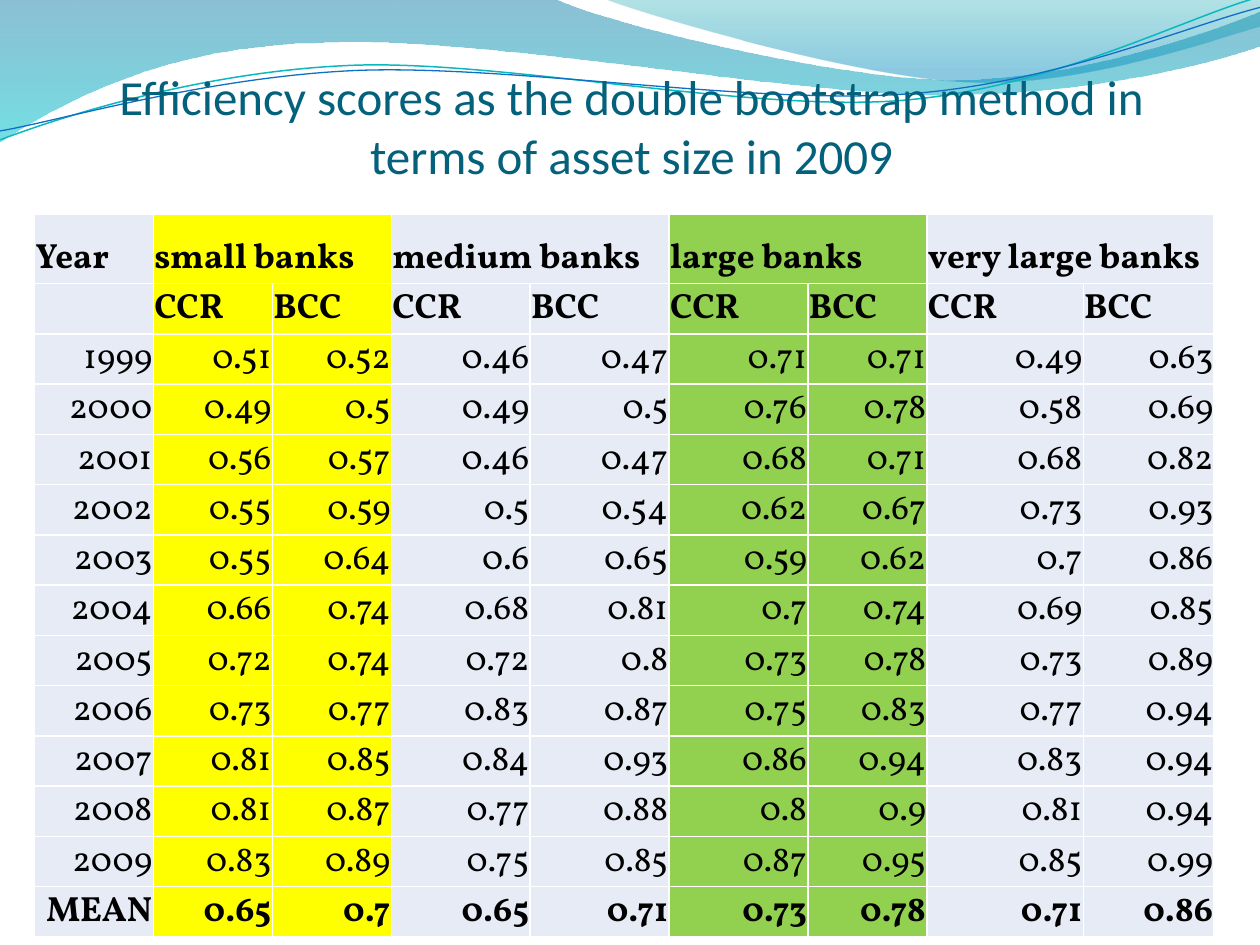
"""Build the slide of bank efficiency scores by asset size."""
from math import cos, radians, sin
from lxml.etree import SubElement
from pptx import Presentation
from pptx.dml.color import RGBColor as RGB
from pptx.enum.text import MSO_ANCHOR as ANCHOR, PP_ALIGN as ALIGN
from pptx.oxml.ns import qn
from pptx.util import Cm, Pt

TITLE = "Efficiency scores as the double bootstrap method in terms of asset size in 2009"
GROUPS = [("small banks", "small"), ("medium banks", "plain"),
          ("large banks", "large"), ("very large banks", "plain")]
MEASURES = ["CCR", "BCC"]
SCORES = [
    ("1999", 0.51, 0.52, 0.46, 0.47, 0.71, 0.71, 0.49, 0.63),
    ("2000", 0.49, 0.5, 0.49, 0.5, 0.76, 0.78, 0.58, 0.69),
    ("2001", 0.56, 0.57, 0.46, 0.47, 0.68, 0.71, 0.68, 0.82),
    ("2002", 0.55, 0.59, 0.5, 0.54, 0.62, 0.67, 0.73, 0.93),
    ("2003", 0.55, 0.64, 0.6, 0.65, 0.59, 0.62, 0.7, 0.86),
    ("2004", 0.66, 0.74, 0.68, 0.81, 0.7, 0.74, 0.69, 0.85),
    ("2005", 0.72, 0.74, 0.72, 0.8, 0.73, 0.78, 0.73, 0.89),
    ("2006", 0.73, 0.77, 0.83, 0.87, 0.75, 0.83, 0.77, 0.94),
    ("2007", 0.81, 0.85, 0.84, 0.93, 0.86, 0.94, 0.83, 0.94),
    ("2008", 0.81, 0.87, 0.77, 0.88, 0.8, 0.9, 0.81, 0.94),
    ("2009", 0.83, 0.89, 0.75, 0.85, 0.87, 0.95, 0.85, 0.99),
    ("MEAN", 0.65, 0.7, 0.65, 0.71, 0.73, 0.78, 0.71, 0.86),
]
COL_WIDTHS = [2.39, 2.4, 2.4, 2.8, 2.8, 2.8, 2.4, 3.15, 2.64]
HEAD_HEIGHT, BODY_HEIGHT = 1.4, 13.17

THEME = {
    "title": ("Calibri", 28, "04617B"), "body": ("Vollkorn", 20, "000000"),
    "plain": "E7EBF5", "small": "FFFF00", "large": "92D050", "border": "FFFFFF",
    "deep_wave": [(0, "0074A1", 45), (1, "00C6CF", 55)],
    "light_wave": [(0, "00A1A9", 30), (0.8, "008BBF", 45)],
    "teal_line": ("0AB8BF", 0.85), "blue_line": ("0F6FC6", 0.75),
}

# Each segment holds one point for a straight edge or three for a Bezier curve.
WAVES = [
    ("deep_wave", (0, -0.03), [
        [(11.18, -0.03)],
        [(12.09, 0.43), (16.87, 1.6), (19.25, 1.6)],
        [(21.67, 1.6), (24.33, 0.66), (25.4, 0.23)],
        [(25.43, 0.91)],
        [(24.97, 1.12), (22.1, 1.93), (18.95, 1.91)],
        [(15.8, 1.91), (9.7, 0.71), (6.53, 0.86)],
        [(3.28, 0.89), (1.17, 2.11), (-0.03, 2.87)]]),
    ("light_wave", (12.17, -0.03), [
        [(12.93, 0.28), (17.32, 1.57), (19.53, 1.65)],
        [(21.74, 1.75), (24.41, 0.81), (25.4, 0.53)],
        [(25.4, 0)]]),
]
LINES = [
    ("teal_line", (0, 2.82), [
        [(1.22, 2.36), (4.01, 1.45), (7.04, 1.32)],
        [(10.03, 1.19), (15.06, 2.26), (18.11, 2.03)],
        [(21.16, 1.8), (23.83, 0.38), (25.35, -0.05)]]),
    ("blue_line", (0, 2.64), [
        [(1.19, 2.44), (4.17, 1.55), (7.19, 1.42)],
        [(10.24, 1.3), (15.16, 2.11), (18.21, 1.9)],
        [(21.23, 1.7), (23.9, 0.53), (25.4, 0.15)]]),
]
LINE_TILT, LINE_CENTER = 2.7, (12.68, 1.48)


def level(point):
    a, (cx, cy) = radians(LINE_TILT), LINE_CENTER
    dx, dy = point[0] - cx, point[1] - cy
    return cx + dx * cos(a) - dy * sin(a), cy + dx * sin(a) + dy * cos(a)


def add_outline(slide, start, segments, close):
    points = [(Cm(x), Cm(y)) for seg in segments for x, y in seg]
    builder = slide.shapes.build_freeform(Cm(start[0]), Cm(start[1]))
    builder.add_line_segments(points, close=close)
    s = builder.convert_to_shape()
    s.shadow.inherit = False
    edges = iter(list(s._element.iter(qn("a:lnTo"))))
    for seg in segments:
        group = [next(edges) for _ in seg]
        if len(group) == 3:
            group[0].tag = qn("a:cubicBezTo")
            for edge in group[1:]:
                group[0].append(edge[0])
                edge.getparent().remove(edge)
    return s


def add_wave(slide, name, start, segments):
    s = add_outline(slide, start, segments, True)
    s.line.fill.background()
    s.fill.gradient()
    s.fill.gradient_angle = 270
    for stop, (pos, color, _) in zip(s.fill.gradient_stops, THEME[name]):
        stop.position = pos
        stop.color.rgb = RGB.from_string(color)
    for clr, (_, _, alpha) in zip(s._element.spPr.iter(qn("a:srgbClr")), THEME[name]):
        SubElement(clr, qn("a:alpha"), val=str(alpha * 1000))


def add_line(slide, name, start, segments):
    color, width = THEME[name]
    flat = [[level(point) for point in seg] for seg in segments]
    s = add_outline(slide, level(start), flat, False)
    s.rotation = 360 - LINE_TILT
    s.fill.background()
    s.line.color.rgb = RGB.from_string(color)
    s.line.width = Pt(width)


def write(tf, text, style, align, bold=False):
    p = tf.paragraphs[0]
    p.alignment = align
    r = p.add_run()
    r.text = text
    name, size, color = THEME[style]
    r.font.name, r.font.size, r.font.bold = name, Pt(size), bold
    r.font.color.rgb = RGB.from_string(color)


def add_title(slide):
    s = slide.shapes.add_textbox(Cm(1.3), Cm(1.12), Cm(22.86), Cm(2.6))
    tf = s.text_frame
    tf.word_wrap = True
    tf.vertical_anchor = ANCHOR.BOTTOM
    tf.margin_left = tf.margin_right = tf.margin_bottom = 0
    tf.margin_top = Cm(0.13)
    write(tf, TITLE, "title", ALIGN.CENTER)


def style_cell(cell, fill):
    cell.margin_left = cell.margin_right = cell.margin_top = Cm(0.02)
    cell.margin_bottom = 0
    tc_pr = cell._tc.get_or_add_tcPr()
    for side in ("lnL", "lnR", "lnT", "lnB"):
        ln = SubElement(tc_pr, qn(f"a:{side}"), w=str(Pt(1)))
        SubElement(SubElement(ln, qn("a:solidFill")), qn("a:srgbClr"), val=THEME["border"])
    cell.fill.solid()
    cell.fill.fore_color.rgb = RGB.from_string(THEME[fill])


def add_scores(slide):
    heads = ["Year"] + [t for name, _ in GROUPS for t in (name, "")]
    rows = [heads, [""] + MEASURES * len(GROUPS), *SCORES]
    fills = ["plain"] + [fill for _, fill in GROUPS for _ in MEASURES]
    body = len(rows) - 1
    heights = [HEAD_HEIGHT] + [BODY_HEIGHT / body] * body
    table = slide.shapes.add_table(len(rows), len(fills), Cm(0.7), Cm(4.32),
                                   Cm(sum(COL_WIDTHS)), Cm(sum(heights))).table
    table.horz_banding = table.first_row = False
    for col, width in zip(table.columns, COL_WIDTHS):
        col.width = Cm(width)
    for row, height in zip(table.rows, heights):
        row.height = Cm(height)
    for i, row in enumerate(rows):
        header = i < 2
        for j, value in enumerate(row):
            cell = table.cell(i, j)
            style_cell(cell, fills[j])
            cell.vertical_anchor = ANCHOR.BOTTOM if header or j == 0 else ANCHOR.MIDDLE
            if value != "":
                write(cell.text_frame, str(value), "body",
                      ALIGN.LEFT if header else ALIGN.RIGHT, header or row[0] == "MEAN")
    for j in range(1, len(fills), 2):
        table.cell(0, j).merge(table.cell(0, j + 1))


def main():
    prs = Presentation()
    prs.slide_width, prs.slide_height = Cm(25.4), Cm(19.05)
    slide = prs.slides.add_slide(prs.slide_layouts[6])
    for wave in WAVES:
        add_wave(slide, *wave)
    for line in LINES:
        add_line(slide, *line)
    add_title(slide)
    add_scores(slide)
    prs.save("out.pptx")


if __name__ == "__main__":
    main()
